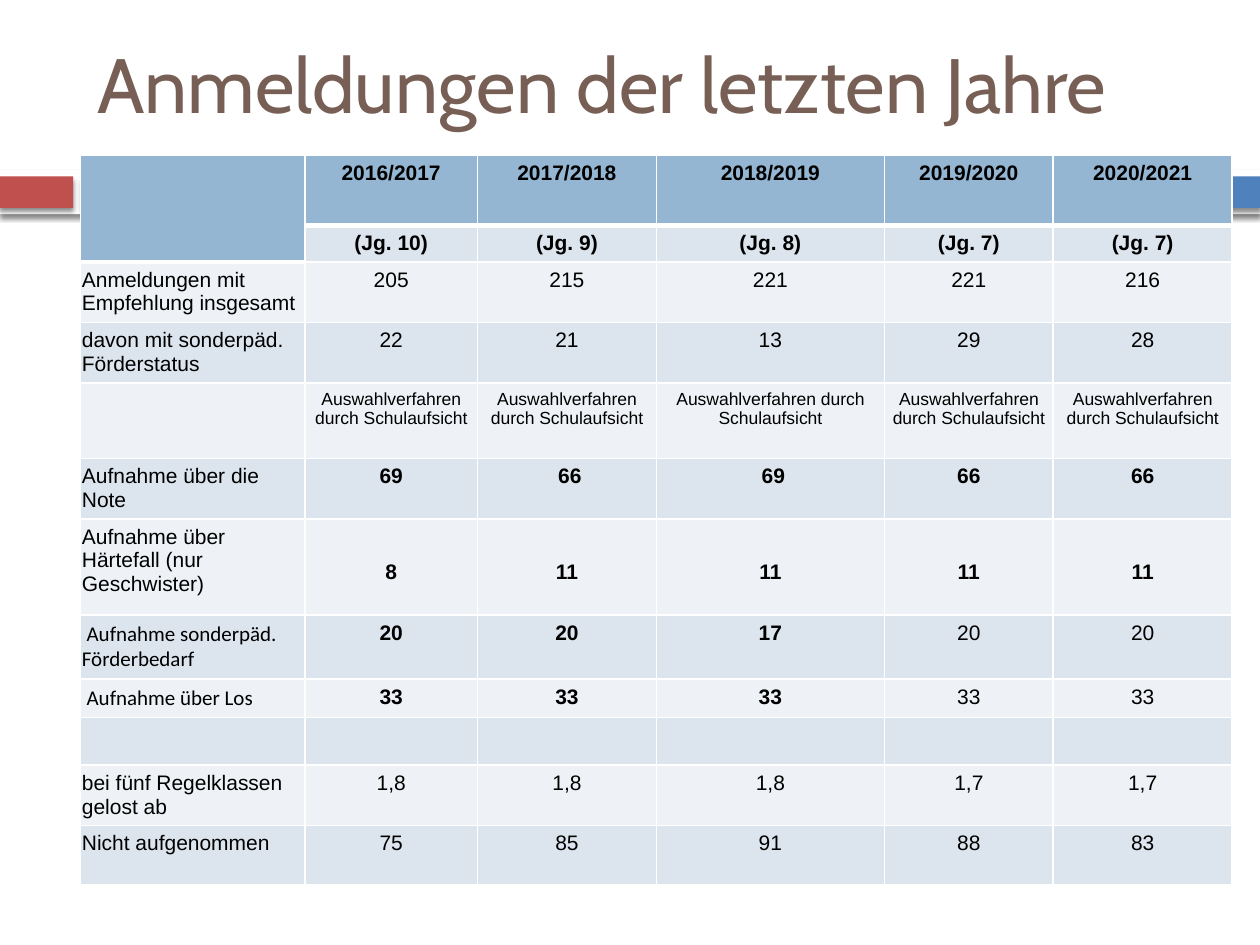
from dataclasses import dataclass

import pptx
import pptx.dml.color
import pptx.enum.shapes
import pptx.enum.text
import pptx.oxml
import pptx.oxml.ns
import pptx.util
from pptx.util import Inches


@dataclass(frozen=True)
class Theme:
    title_color: str = "775F55"
    text_color: str = "000000"
    white: str = "FFFFFF"
    red: str = "C0504D"
    blue: str = "4F81BD"
    header_fill: str = "94B6D2"
    dark_band: str = "DCE5EE"
    light_band: str = "EEF2F6"
    title_font: str = "Cabin"
    body_font: str = "Arial"
    label_font: str = "Calibri"
    title_size: int = 44
    body_size: int = 12
    small_size: int = 10
    thin_line: float = 0.96
    thick_line: float = 3


@dataclass(frozen=True)
class Row:
    height: float
    label: str = ""
    values: tuple = ("",) * 5
    bold_values: int = 0
    size: int = Theme.body_size
    label_font: str = Theme.body_font
    value_margin: float = 0.05


THEME = Theme()
COLUMN_WIDTHS = (1.78, 1.37, 1.42, 1.81, 1.34, 1.42)
ROWS = (
    Row(0.56, values=("2016/2017", "2017/2018", "2018/2019", "2019/2020", "2020/2021"), bold_values=5),
    Row(0.29, values=("(Jg. 10)", "(Jg. 9)", "(Jg. 8)", "(Jg. 7)", "(Jg. 7)"), bold_values=5),
    Row(0.48, "Anmeldungen mit Empfehlung insgesamt", ("205", "215", "221", "221", "216")),
    Row(0.48, "davon mit sonderpäd. Förderstatus", ("22", "21", "13", "29", "28")),
    Row(0.6, values=("Auswahlverfahren durch Schulaufsicht",) * 5, size=THEME.small_size),
    Row(0.48, "Aufnahme über die Note", ("69", " 66", " 69", "66", "66"), bold_values=5),
    Row(0.76, "Aufnahme über Härtefall (nur\nGeschwister)", ("8", "11", "11", "11", "11"),
        bold_values=5, value_margin=0.33),
    Row(0.51, " Aufnahme sonderpäd. Förderbedarf", ("20", "20", "17", "20", "20"),
        bold_values=3, label_font=THEME.label_font),
    Row(0.3, " Aufnahme über Los", ("33",) * 5, bold_values=3, label_font=THEME.label_font),
    Row(0.38),
    Row(0.48, "bei fünf Regelklassen gelost ab", ("1,8", "1,8", "1,8", "1,7", "1,7")),
    Row(0.47, "Nicht aufgenommen", ("75", "85", "91", "88", "83")),
)


def color(value):
    return pptx.dml.color.RGBColor.from_string(value)


def add_band(slide, left, top, width, height, fill):
    """Add a borderless rectangle with a soft shadow falling straight down."""
    band = slide.shapes.add_shape(
        pptx.enum.shapes.MSO_SHAPE.RECTANGLE, Inches(left), Inches(top), Inches(width), Inches(height))
    band.fill.solid()
    band.fill.fore_color.rgb = color(fill)
    band.line.fill.background()
    band.shadow.inherit = False
    effects = band.element.spPr.find(pptx.oxml.ns.qn("a:effectLst"))
    effects.append(pptx.oxml.parse_xml(
        f'<a:outerShdw {pptx.oxml.ns.nsdecls("a")} blurRad="{Inches(0.04)}" dist="{Inches(0.03)}" '
        f'dir="5400000" rotWithShape="0"><a:srgbClr val="{THEME.text_color}">'
        '<a:alpha val="45000"/></a:srgbClr></a:outerShdw>'))


def add_divider(slide, left, top, width, height):
    """Add the white strip holding a short red and a long blue bar."""
    red_width, gap, margin = 0.58, 0.07, 0.05
    bar_top, bar_height = top + margin, height - 2 * margin
    blue_left = left + red_width + gap
    add_band(slide, left, top, width, height, THEME.white)
    add_band(slide, left, bar_top, red_width, bar_height, THEME.red)
    add_band(slide, blue_left, bar_top, left + width - blue_left, bar_height, THEME.blue)


def place_title(slide, left, top, width, height):
    title = slide.shapes.title
    title.left, title.top, title.width, title.height = map(Inches, (left, top, width, height))
    frame = title.text_frame
    frame.text = "Anmeldungen der letzten Jahre"
    frame.auto_size = pptx.enum.text.MSO_AUTO_SIZE.NONE
    frame.vertical_anchor = pptx.enum.text.MSO_ANCHOR.MIDDLE
    paragraph = frame.paragraphs[0]
    paragraph.alignment = pptx.enum.text.PP_ALIGN.LEFT
    paragraph.font.size = pptx.util.Pt(THEME.title_size)
    paragraph.font.name = THEME.title_font
    paragraph.font.color.rgb = color(THEME.title_color)


def set_borders(cell, top, bottom):
    """Draw white cell borders; call before the fill, which follows them in the XML."""
    properties = cell._tc.get_or_add_tcPr()
    for side, points in (("L", THEME.thin_line), ("R", THEME.thin_line), ("T", top), ("B", bottom)):
        properties.append(pptx.oxml.parse_xml(
            f'<a:ln{side} {pptx.oxml.ns.nsdecls("a")} w="{pptx.util.Pt(points)}">'
            f'<a:solidFill><a:srgbClr val="{THEME.white}"/></a:solidFill></a:ln{side}>'))


def fill_cell(cell, text, row, column_index):
    is_label = column_index == 0
    cell.margin_left = cell.margin_right = Inches(0.01)
    cell.margin_top = Inches(0.05 if is_label else row.value_margin)
    cell.margin_bottom = Inches(0.05)
    cell.text_frame.text = text
    for paragraph in cell.text_frame.paragraphs:
        alignments = pptx.enum.text.PP_ALIGN
        paragraph.alignment = alignments.LEFT if is_label else alignments.CENTER
        paragraph.font.size = pptx.util.Pt(row.size)
        paragraph.font.name = row.label_font if is_label else THEME.body_font
        paragraph.font.bold = 0 < column_index <= row.bold_values
        paragraph.font.color.rgb = color(THEME.text_color)


def add_registrations(slide, left, top):
    width, height = sum(COLUMN_WIDTHS), sum(row.height for row in ROWS)
    table = slide.shapes.add_table(
        len(ROWS), len(COLUMN_WIDTHS), Inches(left), Inches(top), Inches(width), Inches(height)).table
    for column, column_width in zip(table.columns, COLUMN_WIDTHS):
        column.width = Inches(column_width)
    for row_index, row in enumerate(ROWS):
        table.rows[row_index].height = Inches(row.height)
        for column_index, text in enumerate((row.label, *row.values)):
            cell = table.cell(row_index, column_index)
            header_end = 1 if column_index == 0 else 0
            top_line = THEME.thick_line if row_index == header_end + 1 else THEME.thin_line
            bottom_line = THEME.thick_line if row_index == header_end or (
                row_index == 0) else THEME.thin_line
            fill_cell(cell, text, row, column_index)
            set_borders(cell, top_line, bottom_line)
            cell.fill.solid()
            band = THEME.dark_band if row_index % 2 else THEME.light_band
            cell.fill.fore_color.rgb = color(THEME.header_fill if row_index <= header_end else band)
    table.cell(0, 0).merge(table.cell(1, 0))


def main():
    presentation = pptx.Presentation()
    presentation.slide_width, presentation.slide_height = Inches(10), Inches(7.5)
    slide = presentation.slides.add_slide(presentation.slide_layouts.get_by_name("Title Only"))
    add_divider(slide, 0, 1.35, 10, 0.35)
    place_title(slide, 0.67, 0.25, 8.92, 0.82)
    add_registrations(slide, 0.64, 1.23)
    presentation.save("out.pptx")


if __name__ == "__main__":
    main()
